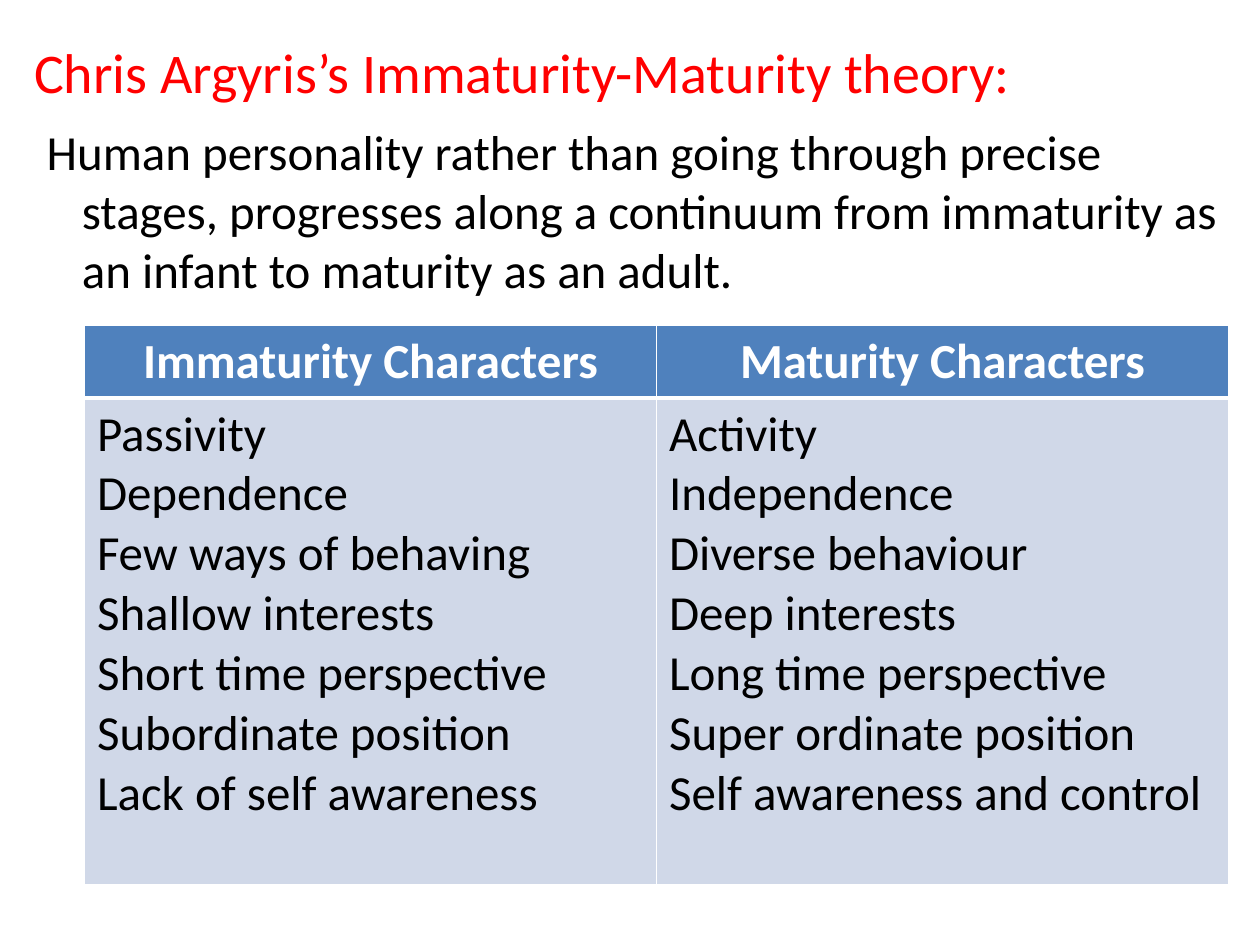
import pptx
import pptx.util
import pptx.dml.color
import pptx.enum.text
import pptx.oxml
import pptx.oxml.ns

Inches, Pt = pptx.util.Inches, pptx.util.Pt
ALIGN = pptx.enum.text.PP_ALIGN

# Content
TITLE = "Chris Argyris’s Immaturity-Maturity theory:"
INTRO = ("Human personality rather than going through precise stages, "
         "progresses along a continuum from immaturity as an infant "
         "to maturity as an adult.")
HEADS = ["Immaturity Characters", "Maturity Characters"]
PAIRS = [
    ("Passivity", "Activity"),
    ("Dependence", "Independence"),
    ("Few ways of behaving", "Diverse behaviour"),
    ("Shallow interests", "Deep interests"),
    ("Short time perspective", "Long time perspective"),
    ("Subordinate position", "Super ordinate position"),
    ("Lack of self awareness", "Self awareness and control"),
]
COLORS = {"title": "FF0000", "text": "000000", "white": "FFFFFF",
          "head": "4F81BD", "cell": "D0D8E8"}
HEIGHTS = [0.58, 3.86]


def rgb(name):
    return pptx.dml.color.RGBColor.from_string(COLORS[name])


def write(para, text, size=28, color="text", bold=False, align=None):
    run = para.add_run()
    run.text = text
    run.font.name = "Calibri"
    run.font.size = Pt(size)
    run.font.bold = bold
    run.font.color.rgb = rgb(color)
    para.alignment = align


def hang(para, first):
    """Indent without a bullet; the first line hangs left by `first`."""
    props = para._p.get_or_add_pPr()
    props.set("marL", str(Inches(0.38)))
    props.set("indent", str(-Inches(first)))
    props.append(pptx.oxml.parse_xml(
        f"<a:buNone {pptx.oxml.ns.nsdecls('a')}/>"))


def style(cell, fill, **widths):
    """Fill a cell and draw its white borders, widths in points."""
    props = cell._tc.get_or_add_tcPr()
    for side in ("L", "R", "T", "B"):
        props.append(pptx.oxml.parse_xml(
            f"<a:ln{side} {pptx.oxml.ns.nsdecls('a')} "
            f"w=\"{Pt(widths.get(side, 1))}\"><a:solidFill>"
            f"<a:srgbClr val=\"{COLORS['white']}\"/>"
            f"</a:solidFill></a:ln{side}>"))
    cell.fill.solid()
    cell.fill.fore_color.rgb = rgb(fill)


deck = pptx.Presentation()
deck.slide_width, deck.slide_height = Inches(10), Inches(7.5)
slide = deck.slides.add_slide(deck.slide_layouts[1])

# Heading and introduction share the body
unused = slide.shapes.title._element
unused.getparent().remove(unused)
body = slide.placeholders[1]
body.left, body.top = Inches(0.17), Inches(0.25)
body.width, body.height = Inches(9.67), Inches(7.08)
frame = body.text_frame
frame.auto_size = pptx.enum.text.MSO_AUTO_SIZE.NONE
head = frame.paragraphs[0]
write(head, TITLE, size=32, color="title")
hang(head, 0.38)
intro = frame.add_paragraph()
write(intro, INTRO)
intro.space_before = Pt(9.5)
hang(intro, 0.28)

# Comparison table
table = slide.shapes.add_table(
    2, 2, Inches(0.67), Inches(2.58), Inches(9.08),
    Inches(sum(HEIGHTS))).table
for row, height in zip(table.rows, HEIGHTS):
    row.height = Inches(height)
for col, (label, traits) in enumerate(zip(HEADS, zip(*PAIRS))):
    top, low = table.cell(0, col), table.cell(1, col)
    write(top.text_frame.paragraphs[0], label, color="white", bold=True,
          align=ALIGN.CENTER)
    style(top, "head", B=3)
    for i, trait in enumerate(traits):
        text = low.text_frame
        write(text.add_paragraph() if i else text.paragraphs[0], trait)
    style(low, "cell", T=3)

deck.save("out.pptx")
